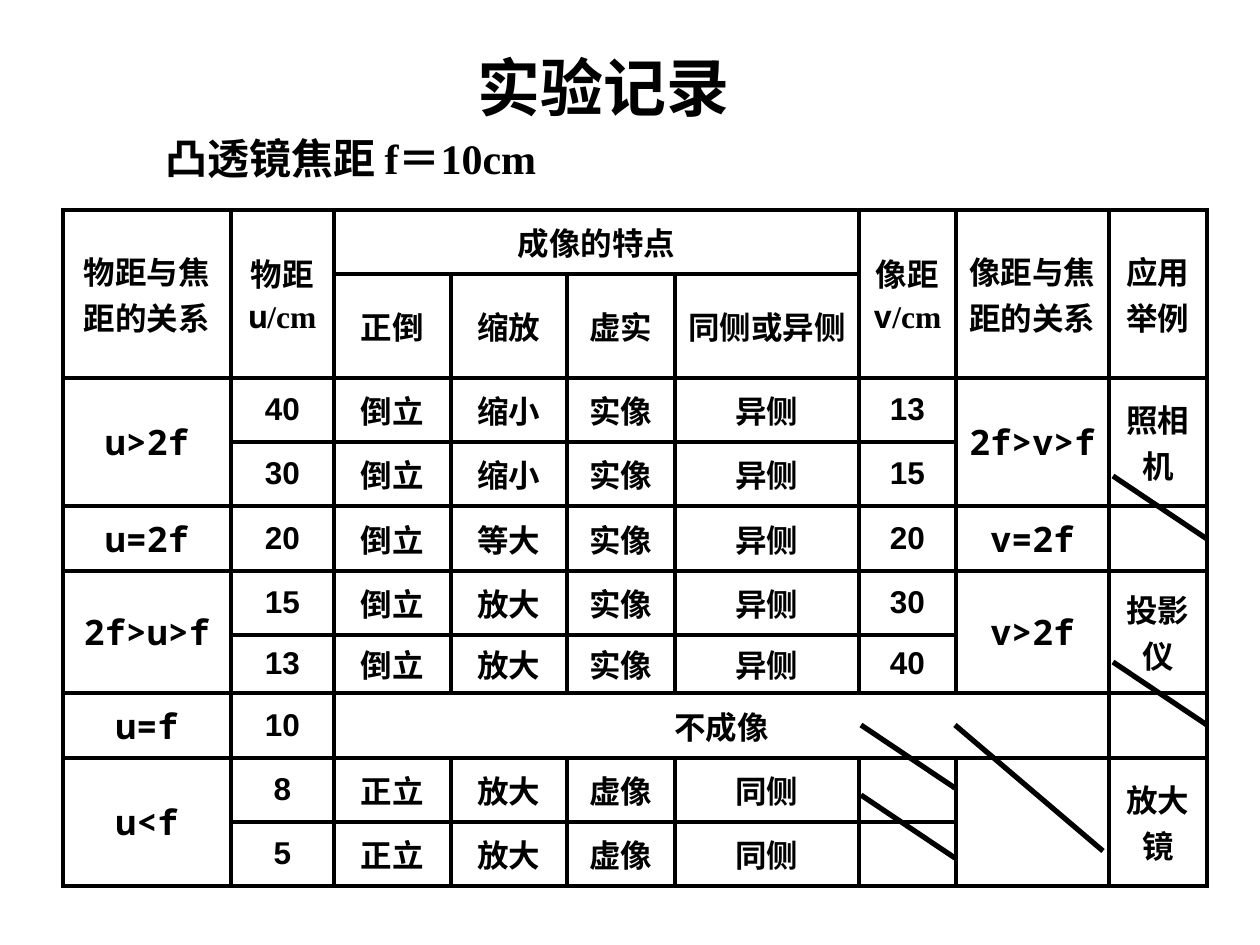
"""Builds the convex lens experiment record slide."""
from dataclasses import dataclass

from lxml import etree
from pptx import Presentation
from pptx.dml.color import RGBColor
from pptx.enum.shapes import MSO_CONNECTOR
from pptx.enum.text import MSO_ANCHOR, PP_ALIGN
from pptx.oxml.ns import qn
from pptx.util import Pt

STRAIGHT = MSO_CONNECTOR.STRAIGHT
MIDDLE = MSO_ANCHOR.MIDDLE
CENTER = PP_ALIGN.CENTER
LEFT = PP_ALIGN.LEFT


@dataclass(frozen=True)
class Theme:
    ink: str = "000000"
    serif: str = "Times New Roman"
    sans: str = "Arial"
    mono: str = "Noto Sans Mono"
    title: int = 36
    subtitle: int = 24
    relation: int = 20
    cell: int = 18
    border: float = 2.25
    stroke: int = 3


THEME = Theme()
INK = RGBColor.from_string(THEME.ink)
TITLE_ONLY = 5
HEADER_ROWS = 2
RELATION_COLUMNS = (0, 7)
COLUMN_WIDTHS = [168, 103, 117, 116, 108, 184, 97, 153, 98]
ROW_HEIGHTS = [64, 104, 64, 64, 65, 64, 58, 65, 64, 64]
ROWS = [
    ["物距与焦距的关系", "物距\nu/cm", "成像的特点", "", "", "",
     "像距\nv/cm", "像距与焦距的关系", "应用举例"],
    ["", "", "正倒", "缩放", "虚实", "同侧或异侧", "", "", ""],
    ["u>2f", "40", "倒立", "缩小", "实像", "异侧", "13", "2f>v>f", "照相机"],
    ["", "30", "倒立", "缩小", "实像", "异侧", "15", "", ""],
    ["u=2f", "20", "倒立", "等大", "实像", "异侧", "20", "v=2f", ""],
    ["2f>u>f", "15", "倒立", "放大", "实像", "异侧", "30", "v>2f", "投影仪"],
    ["", "13", "倒立", "放大", "实像", "异侧", "40", "", ""],
    ["u=f", "10", "不成像", "", "", "", "", "", ""],
    ["u<f", "8", "正立", "放大", "虚像", "同侧", "", "", "放大镜"],
    ["", "5", "正立", "放大", "虚像", "同侧", "", "", ""],
]
TWO_ROW_CELLS = [(0, 0), (0, 1), (0, 6), (0, 7), (0, 8)] + [
    (row, column) for row in (2, 5, 8) for column in (0, 7, 8)]
WIDE_CELLS = [(0, 2, 5), (7, 2, 7)]
STROKES = [
    (861, 725, 955, 788),
    (955, 725, 1103, 851),
    (861, 795, 955, 858),
    (1113, 662, 1207, 725),
    (1113, 476, 1207, 539),
]


def px(length):
    return round(length * 914400 / 126)


def style(para, size, face, align):
    para.alignment = align
    para.font.size = Pt(size)
    para.font.name = face
    para.font.bold = True
    para.font.color.rgb = INK


deck = Presentation()
deck.slide_width, deck.slide_height = px(1260), px(945)
page = deck.slides.add_slide(deck.slide_layouts[TITLE_ONLY])

title = page.shapes.title
title.left, title.top, title.width, title.height = px(53), px(42), px(1102), px(88)
title.text_frame.text = "实验记录"
title.text_frame.vertical_anchor = MIDDLE
style(title.text_frame.paragraphs[0], THEME.title, THEME.serif, CENTER)

focal_box = page.shapes.add_textbox(px(105), px(126), px(976), px(53))
focal_box.text_frame.word_wrap = True
focal_box.text_frame.margin_left = px(60)
focal_box.text_frame.text = "凸透镜焦距 f＝10cm"
style(focal_box.text_frame.paragraphs[0], THEME.subtitle, THEME.serif, LEFT)

table = page.shapes.add_table(
    len(ROWS), len(COLUMN_WIDTHS), px(63), px(210),
    px(sum(COLUMN_WIDTHS)), px(sum(ROW_HEIGHTS))).table
table.first_row = False
table.horz_banding = False
for column, width in zip(table.columns, COLUMN_WIDTHS):
    column.width = px(width)
for row, height in zip(table.rows, ROW_HEIGHTS):
    row.height = px(height)

for row_index, texts in enumerate(ROWS):
    for column_index, text in enumerate(texts):
        cell = table.cell(row_index, column_index)
        cell.vertical_anchor = MIDDLE
        properties = cell._tc.get_or_add_tcPr()
        for side in ("lnL", "lnR", "lnT", "lnB"):
            edge = etree.SubElement(properties, qn(f"a:{side}"), w=str(Pt(THEME.border)))
            paint = etree.SubElement(edge, qn("a:solidFill"))
            etree.SubElement(paint, qn("a:srgbClr"), val=THEME.ink)
        cell.fill.background()

        size, face = THEME.cell, THEME.sans
        if row_index < HEADER_ROWS:
            face = THEME.serif
        elif column_index in RELATION_COLUMNS:
            size, face = THEME.relation, THEME.mono
        if not text:
            continue
        cell.text_frame.text = text
        for para in cell.text_frame.paragraphs:
            style(para, size, face, CENTER)
            symbol, slash, unit = para.text.partition("/")
            if slash:
                span = para.runs[0]
                span.text = symbol
                span.font.name = THEME.mono
                para.add_run().text = slash + unit

for row_index, column_index in TWO_ROW_CELLS:
    table.cell(row_index, column_index).merge(table.cell(row_index + 1, column_index))
for row_index, first, last in WIDE_CELLS:
    table.cell(row_index, first).merge(table.cell(row_index, last))

for ends in STROKES:
    stroke = page.shapes.add_connector(STRAIGHT, *map(px, ends))
    stroke.line.color.rgb = INK
    stroke.line.width = Pt(THEME.stroke)
    etree.SubElement(stroke._element.spPr, qn("a:effectLst"))

deck.save("out.pptx")
